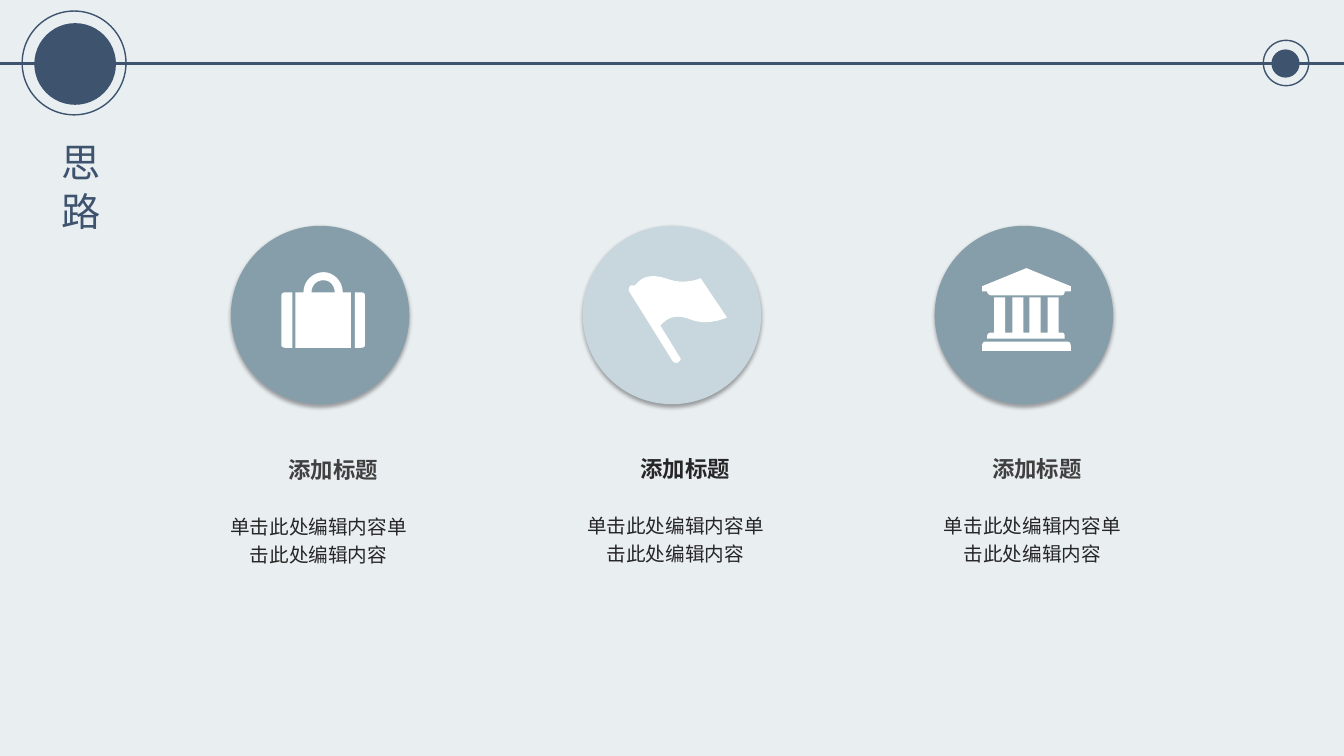
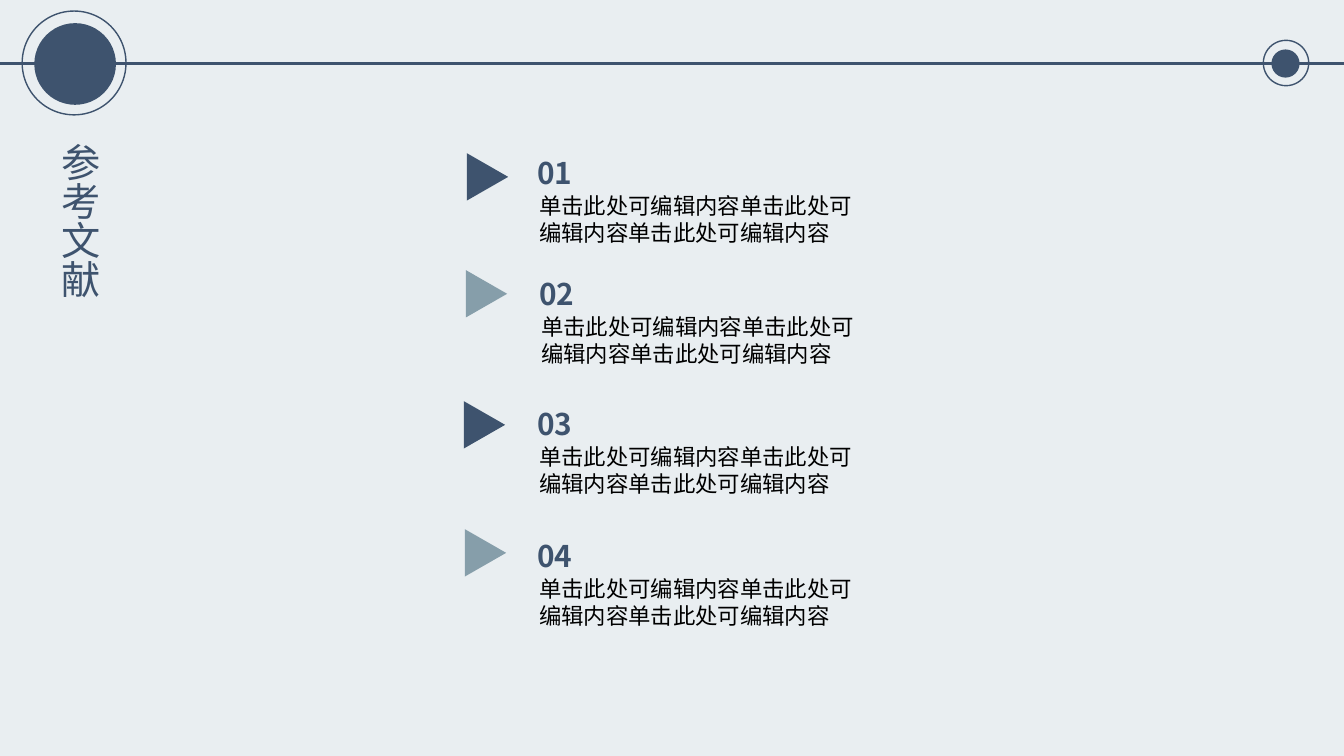
from dataclasses import dataclass
from lxml import etree
from pptx import Presentation, util as u
from pptx.dml.color import RGBColor
from pptx.enum import shapes, text
from pptx.oxml import ns

I = u.Inches


@dataclass(frozen=True)
class Theme:
    back: str = "E9EEF1"
    navy: str = "3E536E"
    teal: str = "869EAA"
    pale: str = "C8D7DE"
    white: str = "FFFFFF"
    black: str = "000000"
    dark: str = "262626"
    grey: str = "404040"
    font: str = "Noto Sans CJK SC"
    title: float = 28
    num: float = 21.3
    head: float = 16
    body: float = 14


T = Theme()
OVAL = shapes.MSO_SHAPE.OVAL
TRI = shapes.MSO_SHAPE.ISOSCELES_TRIANGLE

# Outlines in inches: a pair is a corner, six numbers are a cubic curve.
CASE = [
    [(3.52, 3.45), (3.52, 2.9), (3.58, 2.9), (3.61, 2.9, 3.62, 2.91, 3.62, 2.94),
     (3.62, 3.42), (3.62, 3.44, 3.61, 3.45, 3.58, 3.45)],
    [(2.93, 3.45), (2.93, 2.9), (3.01, 2.9), (3.01, 2.79, 3.1, 2.7, 3.21, 2.7),
     (3.31, 2.7, 3.4, 2.79, 3.4, 2.9), (3.48, 2.9), (3.48, 3.45)],
    [(3.21, 2.78), (3.14, 2.78, 3.09, 2.83, 3.09, 2.9), (3.32, 2.9),
     (3.32, 2.83, 3.27, 2.78, 3.21, 2.78)],
    [(2.9, 3.45), (2.83, 3.45), (2.81, 3.45, 2.79, 3.44, 2.79, 3.42), (2.79, 2.94),
     (2.79, 2.91, 2.81, 2.9, 2.83, 2.9), (2.9, 2.9)],
]
FLAG = [
    [(6.95, 2.76), (6.95, 2.76, 6.79, 2.83, 6.63, 2.77),
     (6.46, 2.71, 6.37, 2.74, 6.3, 2.83), (6.28, 2.83, 6.27, 2.83, 6.26, 2.83),
     (6.24, 2.84, 6.23, 2.87, 6.24, 2.89), (6.67, 3.58),
     (6.68, 3.59, 6.69, 3.6, 6.71, 3.6), (6.72, 3.6, 6.72, 3.6, 6.73, 3.59),
     (6.75, 3.58, 6.76, 3.56, 6.74, 3.54), (6.55, 3.23),
     (6.63, 3.14, 6.71, 3.11, 6.88, 3.18), (7.04, 3.23, 7.21, 3.15, 7.21, 3.15)],
]
PILLARS = [p for x in (9.86, 10.04, 10.21, 10.39)
           for p in ((x, 3.3), (x, 2.95), (x + 0.11, 2.95), (x + 0.11, 3.3))]
BANK = [
    [(10.62, 2.84), (10.62, 2.89), (10.56, 2.89),
     (10.56, 2.91, 10.55, 2.93, 10.53, 2.93), (9.83, 2.93),
     (9.81, 2.93, 9.79, 2.91, 9.79, 2.89), (9.74, 2.89), (9.74, 2.84), (10.18, 2.66)],
    [(10.62, 3.43), (10.62, 3.48), (9.74, 3.48), (9.74, 3.43),
     (9.74, 3.4, 9.76, 3.39, 9.77, 3.39), (10.59, 3.39),
     (10.6, 3.39, 10.62, 3.4, 10.62, 3.43)],
    PILLARS + [(10.53, 3.3), (10.55, 3.3, 10.56, 3.31, 10.56, 3.34), (10.56, 3.36),
               (9.79, 3.36), (9.79, 3.34), (9.79, 3.31, 9.81, 3.3, 9.83, 3.3)],
]


def rgb(hue):
    return RGBColor.from_string(hue)


def paint(shape, fill=None, line=None):
    shape.shadow.inherit = False
    if fill:
        shape.fill.solid()
        shape.fill.fore_color.rgb = rgb(fill)
    else:
        shape.fill.background()
    if line:
        shape.line.color.rgb = rgb(line)
        shape.line.width = u.Pt(1)
    else:
        shape.line.fill.background()


def preset(slide, kind, box, **hues):
    shape = slide.shapes.add_shape(kind, *map(I, box))
    paint(shape, **hues)
    return shape


def shade(shape):
    """Put a soft shadow under the shape."""
    fx = shape._element.spPr.find(ns.qn("a:effectLst"))
    cast = etree.SubElement(fx, ns.qn("a:outerShdw"), blurRad=str(u.Pt(3.1)),
                            dist=str(u.Pt(1.8)), dir="5400000", algn="t", rotWithShape="0")
    hue = etree.SubElement(cast, ns.qn("a:srgbClr"), val=T.black)
    etree.SubElement(hue, ns.qn("a:alpha"), val="35000")


def trace(steps, parts=8):
    """Turn corners and cubic curves into points in slide units."""
    pts = []
    for step in steps:
        if len(step) == 2:
            pts.append(step)
            continue
        ends = [pts[-1], step[:2], step[2:4], step[4:]]
        for n in range(1, parts + 1):
            t = n / parts
            mix = ((1 - t) ** 3, 3 * t * (1 - t) ** 2, 3 * t * t * (1 - t), t ** 3)
            pts.append(tuple(sum(m * e[k] for m, e in zip(mix, ends)) for k in (0, 1)))
    return [(I(x), I(y)) for x, y in pts]


def icon(slide, loops):
    pen = None
    for loop in loops:
        first, *rest = trace(loop)
        if pen is None:
            pen = slide.shapes.build_freeform(*first)
        else:
            pen.move_to(*first)
        pen.add_line_segments(rest, close=True)
    paint(pen.convert_to_shape(), fill=T.white)


def label(slide, box, words, size, hue, bold=False, align=None, space=None, vert=False):
    frame = slide.shapes.add_textbox(*map(I, box)).text_frame
    frame.word_wrap = True
    frame.auto_size = text.MSO_AUTO_SIZE.SHAPE_TO_FIT_TEXT
    if vert:
        frame._txBody.bodyPr.set("vert", "eaVert")
    para = frame.paragraphs[0]
    run = para.add_run()
    run.text = words
    looks = {para: {"alignment": align, "line_spacing": space},
             run.font: {"name": T.font, "size": u.Pt(size), "bold": bold}}
    for item, vals in looks.items():
        for key, val in vals.items():
            setattr(item, key, val)
    run.font.color.rgb = rgb(hue)
    east = etree.SubElement(run.font._element, ns.qn("a:ea"))
    east.set("typeface", T.font)


def header(slide, title):
    rule = slide.shapes.add_connector(
        shapes.MSO_CONNECTOR.STRAIGHT, 0, I(0.63), I(13.33), I(0.63))
    rule.line.color.rgb = rgb(T.navy)
    rule.line.width = u.Pt(2)
    etree.SubElement(rule._element.spPr, ns.qn("a:effectLst"))
    for x, y, d, hues in ((0.34, 0.23, 0.81, {"fill": T.navy}),
                          (0.22, 0.11, 1.03, {"line": T.navy}),
                          (12.61, 0.49, 0.28, {"fill": T.navy}),
                          (12.53, 0.4, 0.45, {"line": T.navy})):
        preset(slide, OVAL, (x, y, d, d), **hues)
    label(slide, (0.4, 1.32, 0.67, 2.16), title, T.title, T.navy, vert=True)


def ideas(slide):
    mid = text.PP_ALIGN.CENTER
    cols = ((T.teal, T.grey, CASE), (T.pale, T.dark, FLAG), (T.teal, T.grey, BANK))
    for n, (fill, hue, loops) in enumerate(cols):
        left = 3.49 * n
        drop = 0 if n else 0.01
        shade(preset(slide, OVAL, (2.29 + left, 2.24, 1.77, 1.77), fill=fill))
        icon(slide, loops)
        label(slide, (2.61 + left, 4.47 + drop, 1.39, 0.37), "添加标题",
              T.head, hue, bold=True, align=mid)
        label(slide, (2.14 + 3.54 * n, 5 + drop, 2.04, 0.95),
              "单击此处编辑内容" * 2, T.body, T.dark, align=mid, space=1.2)


def sources(slide):
    rows = ((4.6, 1.55, 5.23, 1.49), (4.59, 2.71, 5.25, 2.69),
            (4.57, 4.01, 5.23, 3.98), (4.58, 5.28, 5.23, 5.29))
    for n, (x, y, left, top) in enumerate(rows):
        mark = preset(slide, TRI, (x, y, 0.47, 0.41), fill=(T.navy, T.teal)[n % 2])
        mark.rotation = 90
        label(slide, (left + 0.02, top + 0.37, 3.35, 0.64),
              "单击此处可编辑内容" * 3, T.head, T.black)
        label(slide, (left, top, 1.29, 0.46), f"{n + 1:02}", T.num, T.navy, bold=True)


def main():
    prs = Presentation()
    prs.slide_width, prs.slide_height = I(13.33), I(7.5)
    back = prs.slide_master.background.fill
    back.solid()
    back.fore_color.rgb = rgb(T.back)
    for title, draw in (("思 路", ideas), ("参考文献", sources)):
        slide = prs.slides.add_slide(prs.slide_layouts[6])
        draw(slide)
        header(slide, title)
    prs.save("out.pptx")


if __name__ == "__main__":
    main()
